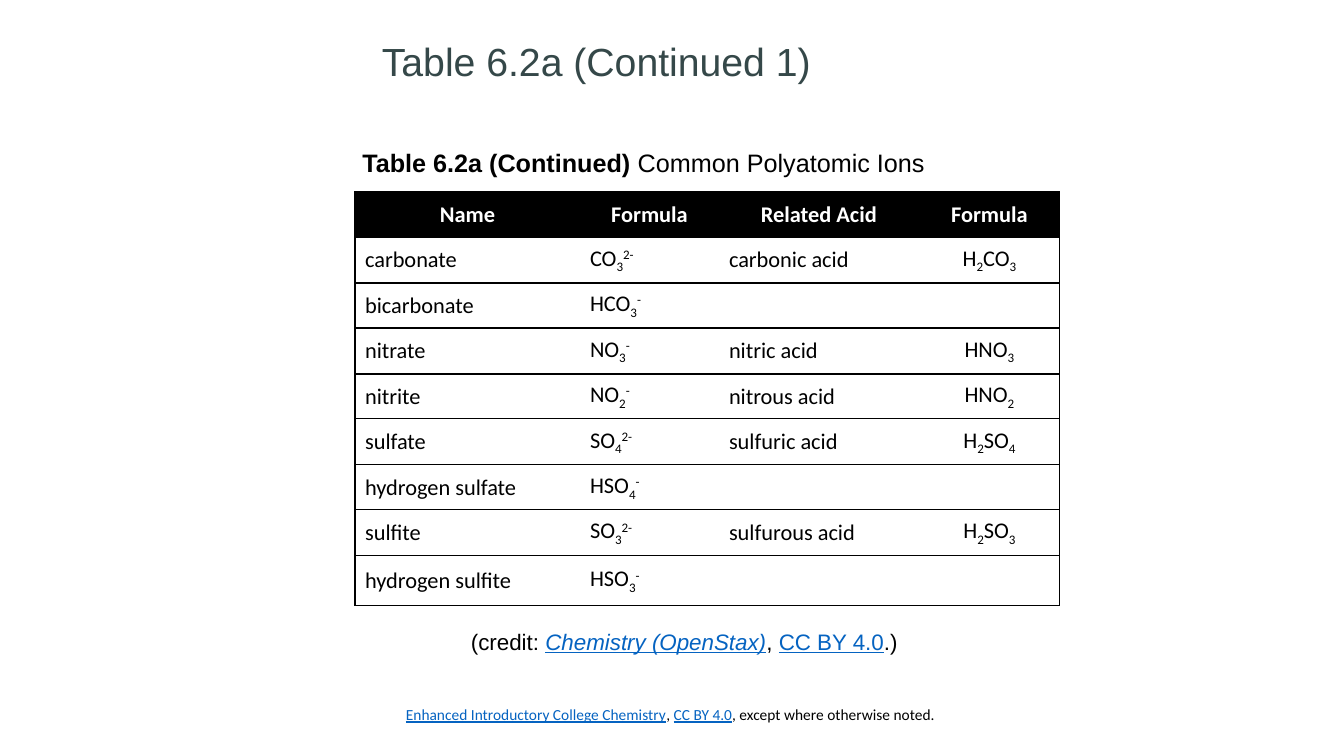
from lxml import etree
from pptx import Presentation, util as u
from pptx.dml.color import RGBColor
from pptx.enum import text
from pptx.oxml.ns import qn

PX = 914400 / 100.8
BLACK, WHITE, LINK, SLATE = "000000", "FFFFFF", "0563C1", "354849"


def px(length):
    return u.Emu(round(length * PX))


def add_run(paragraph, words, size, face, color=BLACK, bold=False, italic=False, baseline=0):
    """Add one run; link-coloured runs are underlined, baseline is in percent."""
    run = paragraph.add_run()
    run.text = words
    font = run.font
    font.size, font.name, font.bold, font.italic = u.Pt(size), face, bold, italic
    font.color.rgb = RGBColor.from_string(color)
    font.underline = color == LINK
    if baseline:
        run._r.get_or_add_rPr().set("baseline", str(baseline * 1000))


deck = Presentation()
deck.slide_width, deck.slide_height = px(1344), px(756)
slide = deck.slides.add_slide(deck.slide_layouts[6])

# Title, caption, credit and footer: box, size, face, wrap, anchor, alignment, runs
TOP, BOTTOM = text.MSO_ANCHOR.TOP, text.MSO_ANCHOR.BOTTOM
LEFT, CENTER = text.PP_ALIGN.LEFT, text.PP_ALIGN.CENTER
text_lines = [
    ((372, 20, 492, 70), 28, "Arial", True, BOTTOM, LEFT,
     [("Table 6.2a (Continued 1)", {"color": SLATE})]),
    ((312, 142, 663, 72), 18, "Arial", True, TOP, CENTER,
     [("Table 6.2a (Continued) ", {"bold": True}), ("Common Polyatomic Ions", {})]),
    ((461, 623, 453, 37), 16, "Arial", False, TOP, LEFT,
     [("(credit: ", {}), ("Chemistry (OpenStax)", {"color": LINK, "italic": True}),
      (", ", {}), ("CC BY 4.0", {"color": LINK}), (".)", {})]),
    ((396, 700, 713, 40), 11, "Calibri", True, TOP, LEFT,
     [("Enhanced Introductory College Chemistry", {"color": LINK}), (", ", {}),
      ("CC BY 4.0", {"color": LINK}), (", except where otherwise noted.", {})]),
]
for box, size, face, wrap, anchor, alignment, runs in text_lines:
    frame = slide.shapes.add_textbox(*map(px, box)).text_frame
    frame.word_wrap, frame.vertical_anchor = wrap, anchor
    line = frame.paragraphs[0]
    line.alignment = alignment
    if anchor == BOTTOM:
        line.line_spacing = 0.9
    for words, style in runs:
        add_run(line, words, size, face, **style)

# Ions: "|" parts the runs, "_" marks a subscript and "^" a superscript
ions = [
    ("Name", "Formula", "Related Acid", "Formula"),
    ("carbonate", "CO|_3|^2-", "carbonic acid", "H|_2|CO|_3"),
    ("bicarbonate", "HCO|_3|^-", "", ""),
    ("nitrate", "NO|_3|^-", "nitric acid", "HNO|_3"),
    ("nitrite", "NO|_2|^-", "nitrous acid", "HNO|_2"),
    ("sulfate", "SO|_4|^2-", "sulfuric acid", "H|_2|SO|_4"),
    ("hydrogen sulfate", "HSO|_4|^-", "", ""),
    ("sulfite", "SO|_3|^2-", "sulfurous acid", "H|_2|SO|_3"),
    ("hydrogen sulfite", "HSO|_3|^-", "", ""),
]
column_widths = [225, 139, 200, 141]
row_heights = [45, 46] * 4 + [50]
BASELINES = {"_": -25, "^": 30}
NO_GRID_STYLE = "{2D5ABB26-0587-4C30-8999-92F81FD0307C}"

table = slide.shapes.add_table(
    len(ions), len(column_widths), px(355), px(192),
    px(sum(column_widths)), px(sum(row_heights))).table
table.horz_banding = False
table._tbl.tblPr.find(qn("a:tableStyleId")).text = NO_GRID_STYLE
for column, width in zip(table.columns, column_widths):
    column.width = px(width)
for row, height in zip(table.rows, row_heights):
    row.height = px(height)

for r, ion in enumerate(ions):
    for c, entry in enumerate(ion):
        cell = table.cell(r, c)
        header = r == 0
        cell.vertical_anchor = text.MSO_ANCHOR.MIDDLE
        edges = ["lnL"] * (c == 0) + ["lnR"] * (c == 3) + ["lnT", "lnB"]
        for edge in edges:
            border = etree.SubElement(cell._tc.get_or_add_tcPr(), qn("a:" + edge), w="12700")
            fill = etree.SubElement(border, qn("a:solidFill"))
            etree.SubElement(fill, qn("a:srgbClr"), val=BLACK)
        cell.fill.solid()
        cell.fill.fore_color.rgb = RGBColor.from_string(BLACK if header else WHITE)
        line = cell.text_frame.paragraphs[0]
        if header or c == 3:
            line.alignment = CENTER
            cell.margin_left = cell.margin_right = cell.margin_top = cell.margin_bottom = 0
        for part in filter(None, entry.split("|")):
            add_run(line, part.lstrip("_^"), 16, "Calibri", WHITE if header else BLACK,
                    bold=header, baseline=BASELINES.get(part[0], 0))

deck.save("out.pptx")
